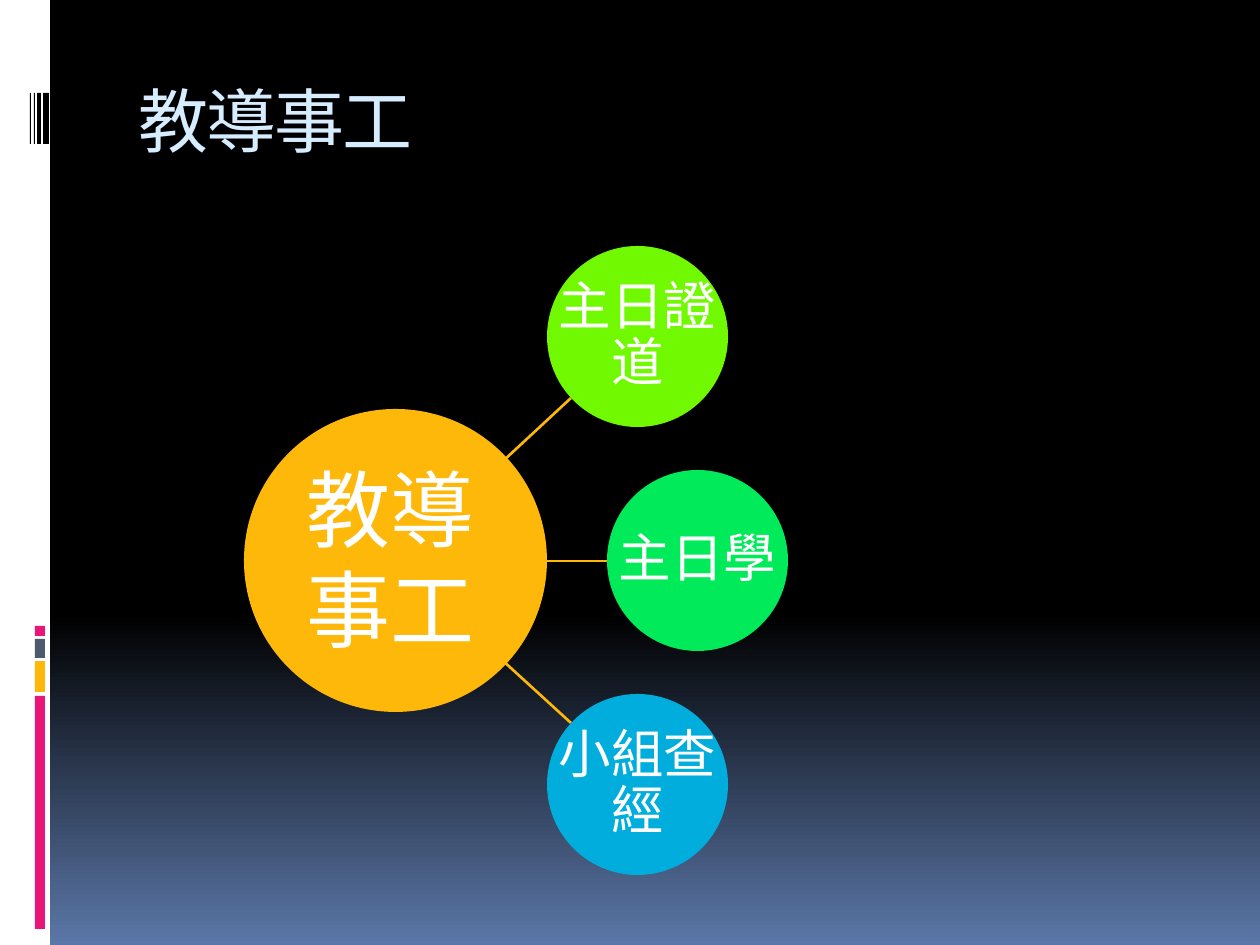
from pptx import Presentation
from pptx.dml.color import RGBColor
from pptx.enum.shapes import MSO_CONNECTOR, MSO_SHAPE
from pptx.enum.text import MSO_ANCHOR, PP_ALIGN
from pptx.oxml.ns import qn
from pptx.util import Emu, Pt
from lxml import etree

SCALE = 914400 / 126
HUES = {
    "black": "000000", "white": "FFFFFF", "navy": "5B77A8", "pink": "EA157A",
    "gold": "FEB80A", "slate": "4E5B6F", "ice": "D6ECFF",
    "lime": "71F901", "green": "00EA59", "blue": "00ADDC",
}


def draw(kind, box, hue):
    shape = slide.shapes.add_shape(kind, *[Emu(round(n * SCALE)) for n in box])
    shape.shadow.inherit = False
    shape.fill.solid()
    shape.fill.fore_color.rgb = RGBColor.from_string(HUES[hue])
    shape.line.fill.background()
    return shape


def write(box, text, size, font, hue):
    label = slide.shapes.add_textbox(*[Emu(round(n * SCALE)) for n in box])
    frame = label.text_frame
    frame.word_wrap = True
    run = frame.paragraphs[0].add_run()
    run.text = text
    run.font.size = Pt(size)
    run.font.name = font
    run.font.color.rgb = RGBColor.from_string(HUES[hue])
    return frame


deck = Presentation()
deck.slide_width = Emu(round(1260 * SCALE))
deck.slide_height = Emu(round(945 * SCALE))
slide = deck.slides.add_slide(deck.slide_layouts[6])

# Background: black that fades to navy in the lower third
back = slide.background.fill
back.gradient()
back.gradient_angle = 270
for stop, (place, hue) in zip(back.gradient_stops, [(0.65, "black"), (1, "navy")]):
    stop.position = place
    stop.color.rgb = RGBColor.from_string(HUES[hue])

# White side band with its colour blocks
draw(MSO_SHAPE.RECTANGLE, (0, 0, 50, 945), "white")
for top, height, hue in [(696, 233, "pink"), (661, 31, "gold"),
                         (639, 19, "slate"), (626, 10, "pink")]:
    draw(MSO_SHAPE.RECTANGLE, (35, top, 10, height), hue)

# Black bars beside the title
for left, width in [(43, 6), (37, 4), (34, 1), (30, 1)]:
    draw(MSO_SHAPE.RECTANGLE, (left, 93, width, 51), "black")

# Title
title = write((126, 71, 1071, 126), "教導事工", 40, "Courier New", "ice")
title.paragraphs[0].runs[0].font._element.set("spc", "-100")

# Spokes from the hub
for ends in [(501, 659, 571, 723), (501, 561, 607, 561), (501, 463, 571, 398)]:
    spoke = slide.shapes.add_connector(
        MSO_CONNECTOR.STRAIGHT, *[Emu(round(n * SCALE)) for n in ends])
    spoke.line.color.rgb = RGBColor.from_string(HUES["gold"])
    spoke.line.width = Pt(1.5)
    etree.SubElement(spoke._element.spPr, qn("a:effectLst"))

# Hub
draw(MSO_SHAPE.OVAL, (244, 409, 303, 303), "gold")

# Outer circles
for left, top, hue, text in [(547, 246, "lime", "主日證道"),
                             (607, 470, "green", "主日學"),
                             (547, 694, "blue", "小組查經")]:
    box = (left, top, 181, 181)
    draw(MSO_SHAPE.OVAL, box, hue)
    frame = write(box, text, 30, "Calibri", "white")
    frame.vertical_anchor = MSO_ANCHOR.MIDDLE
    frame.margin_left = frame.margin_right = Emu(round(2 * SCALE))
    frame.margin_top = frame.margin_bottom = Emu(round(2 * SCALE))
    line = frame.paragraphs[0]
    line.alignment = PP_ALIGN.CENTER
    line.line_spacing = 0.9
    line.space_after = Pt(10.5)

# Hub text
write((294, 451, 231, 217), "教導事工", 48, "Calibri", "white")

deck.save("out.pptx")
